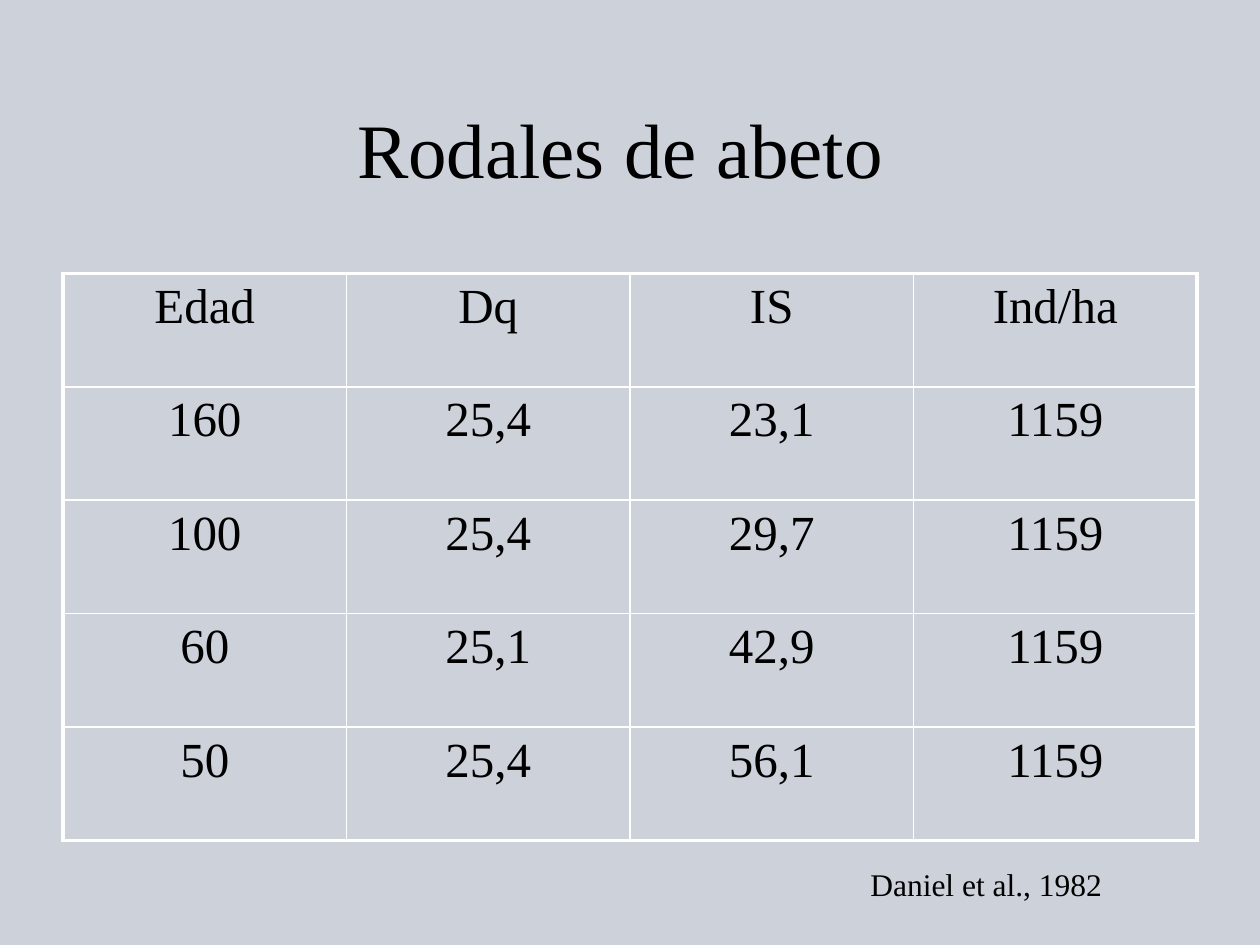
from lxml.etree import SubElement
from pptx import Presentation
from pptx.dml.color import RGBColor
from pptx.enum.text import MSO_ANCHOR, PP_ALIGN
from pptx.oxml.ns import qn
from pptx.util import Inches, Pt

COLORS = {"background": "CDD1DA", "text": "000000", "border": "FFFFFF"}
FONT = "Times New Roman"
ROWS = [
    ["Edad", "Dq", "IS", "Ind/ha"],
    ["160", "25,4", "23,1", "1159"],
    ["100", "25,4", "29,7", "1159"],
    ["60", "25,1", "42,9", "1159"],
    ["50", "25,4", "56,1", "1159"],
]


def write(tf, text, size, align):
    p = tf.paragraphs[0]
    p.text = text
    p.alignment = align
    p.font.name = FONT
    p.font.size = Pt(size)
    p.font.color.rgb = RGBColor.from_string(COLORS["text"])


def add_border(cell, side, width):
    ln = SubElement(cell._tc.get_or_add_tcPr(), qn(f"a:ln{side}"), w=str(Pt(width)))
    fill = SubElement(ln, qn("a:solidFill"))
    SubElement(fill, qn("a:srgbClr"), val=COLORS["border"])


prs = Presentation()
prs.slide_width, prs.slide_height = Inches(10), Inches(7.5)
s = prs.slides.add_slide(prs.slide_layouts[5])
s.background.fill.solid()
s.background.fill.fore_color.rgb = RGBColor.from_string(COLORS["background"])

title = s.shapes.title
title.left, title.top = Inches(0.5), Inches(0.42)
title.width, title.height = Inches(9), Inches(1.5)
title.text_frame.vertical_anchor = MSO_ANCHOR.MIDDLE
write(title.text_frame, "Rodales de abeto ", 44, PP_ALIGN.CENTER)

n_rows, n_cols = len(ROWS), len(ROWS[0])
table = s.shapes.add_table(
    n_rows, n_cols, Inches(0.5), Inches(2.17), Inches(9), Inches(4.5)
).table
table.first_row = False
table.horz_banding = False
for i, row in enumerate(ROWS):
    for j, value in enumerate(row):
        cell = table.cell(i, j)
        write(cell.text_frame, value, 28, PP_ALIGN.CENTER)
        outer_sides = {
            "L": j == 0,
            "R": j == n_cols - 1,
            "T": i == 0,
            "B": i == n_rows - 1,
        }
        for side, outer in outer_sides.items():
            add_border(cell, side, 2.25 if outer else 1)
        cell.fill.background()

source = s.shapes.add_textbox(Inches(6.81), Inches(6.82), Inches(2.13), Inches(0.4))
source.text_frame.word_wrap = False
write(source.text_frame, "Daniel et al., 1982", 18, PP_ALIGN.LEFT)

prs.save("out.pptx")
